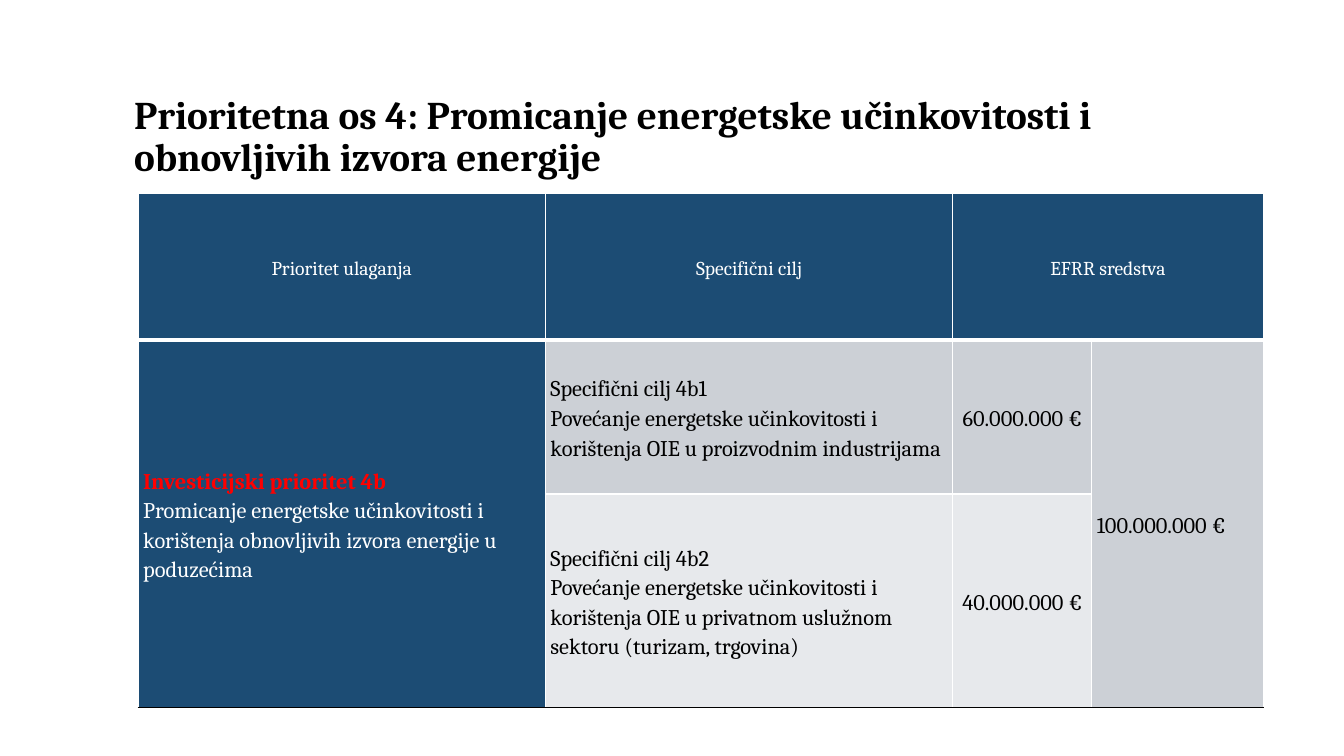
from dataclasses import dataclass

from lxml import etree
from pptx import Presentation
from pptx.dml.color import RGBColor
from pptx.enum.text import MSO_ANCHOR, PP_ALIGN
from pptx.oxml.ns import qn
from pptx.util import Inches, Pt

LEFT, CENTER = PP_ALIGN.LEFT, PP_ALIGN.CENTER
MIDDLE = MSO_ANCHOR.MIDDLE
TITLE_ONLY = 5


@dataclass(frozen=True)
class Theme:
    """Colours, font and type sizes of the slide."""
    font: str = "Cambria"
    navy: str = "1C4C74"
    grey: str = "CCD0D6"
    pale: str = "E7E9EC"
    white: str = "FFFFFF"
    black: str = "000000"
    red: str = "FF0000"
    title: int = 28
    head: int = 14
    body: int = 16


T = Theme()
SLIDE = (13.33, 7.5)
TITLE_BOX = (1.23, 0.83, 10.57, 1.08)
TABLE_BOX = (1.37, 1.92, 11.16, 5.1)
COLS = (4.04, 4.04, 1.38, 1.7)
ROWS = (1.45, 1.53, 2.12)
TITLE = "Prioritetna os 4: Promicanje energetske učinkovitosti i obnovljivih izvora energije"
HEADINGS = ("Prioritet ulaganja", "Specifični cilj", "EFRR sredstva")
PRIORITY = (
    "Investicijski prioritet 4b",
    "Promicanje energetske učinkovitosti i korištenja obnovljivih izvora energije u poduzećima",
)
GOALS = (
    (("Specifični cilj 4b1",
      "Povećanje energetske učinkovitosti i korištenja OIE u proizvodnim industrijama"),
     "60.000.000 €", T.grey),
    (("Specifični cilj 4b2",
      "Povećanje energetske učinkovitosti i korištenja OIE u privatnom uslužnom "
      "sektoru (turizam, trgovina)"),
     "40.000.000 €", T.pale),
)
TOTAL = "100.000.000 €"


def set_attrs(obj, **values):
    """Set every given attribute on the object."""
    for name, value in values.items():
        setattr(obj, name, value)


def add_text(p, text, size, color, bold=False, align=LEFT, spacing=1.15):
    """Put one formatted run into a paragraph."""
    set_attrs(p, alignment=align, line_spacing=spacing, space_before=Pt(0), space_after=Pt(0))
    r = p.add_run()
    r.text = text
    set_attrs(r.font, name=T.font, size=Pt(size), bold=bold)
    r.font.color.rgb = RGBColor.from_string(color)


def set_borders(cell, **borders):
    """Draw the cell borders from side=(colour, width) pairs."""
    tc_pr = cell._tc.get_or_add_tcPr()
    for side, (color, width) in borders.items():
        ln = etree.SubElement(tc_pr, qn(f"a:ln{side}"), w=str(Pt(width)))
        fill = etree.SubElement(ln, qn("a:solidFill"))
        etree.SubElement(fill, qn("a:srgbClr"), val=color)


def fill_cell(cell, lines, fill, size=T.body, colors=(T.black, T.black), align=LEFT):
    """Fill a cell and write its lines; a red line is bold."""
    set_attrs(cell, vertical_anchor=MIDDLE, margin_left=Inches(0.05),
              margin_right=Inches(0.05), margin_top=Inches(0.01), margin_bottom=0)
    cell.fill.solid()
    cell.fill.fore_color.rgb = RGBColor.from_string(fill)
    tf = cell.text_frame
    for i, (line, color) in enumerate(zip(lines, colors)):
        p = tf.add_paragraph() if i else tf.paragraphs[0]
        add_text(p, line, size, color, color == T.red, align)


def add_title(slide, box):
    """Place and format the title in its box."""
    sp = slide.shapes.title
    set_attrs(sp, **dict(zip(("left", "top", "width", "height"), map(Inches, box))))
    tf = sp.text_frame
    set_attrs(tf, word_wrap=True, vertical_anchor=MIDDLE)
    add_text(tf.paragraphs[0], TITLE, T.title, T.black, True, spacing=0.9)


def add_funds_table(slide, box):
    """Build the table of priorities, goals and funds in its box."""
    table = slide.shapes.add_table(len(ROWS), len(COLS), *map(Inches, box)).table
    set_attrs(table, first_row=False, horz_banding=False)
    for col, width in zip(table.columns, COLS):
        col.width = Inches(width)
    for row, height in zip(table.rows, ROWS):
        row.height = Inches(height)

    thin, thick, base = (T.white, 1), (T.white, 3), (T.black, 1)
    tops, bottoms = (thin, thick, thin), (thick, thin, base)
    for r, (top, bottom) in enumerate(zip(tops, bottoms)):
        for c in range(len(COLS)):
            merged = r == 1 and c in (0, 3)
            set_borders(table.cell(r, c), L=thin, R=thin, T=top, B=base if merged else bottom)

    table.cell(0, 2).merge(table.cell(0, 3))
    for c in (0, 3):
        table.cell(1, c).merge(table.cell(2, c))

    for c, heading in enumerate(HEADINGS):
        fill_cell(table.cell(0, c), [heading], T.navy, T.head, [T.white], CENTER)
    fill_cell(table.cell(1, 0), PRIORITY, T.navy, colors=(T.red, T.white))
    for r, (goal, amount, fill) in enumerate(GOALS, 1):
        fill_cell(table.cell(r, 1), goal, fill)
        fill_cell(table.cell(r, 2), [amount], fill, align=CENTER)
    fill_cell(table.cell(1, 3), [TOTAL], T.grey)


def main():
    """Build and save the presentation."""
    prs = Presentation()
    prs.slide_width, prs.slide_height = map(Inches, SLIDE)
    slide = prs.slides.add_slide(prs.slide_layouts[TITLE_ONLY])
    add_title(slide, TITLE_BOX)
    add_funds_table(slide, TABLE_BOX)
    prs.save("out.pptx")


if __name__ == "__main__":
    main()
